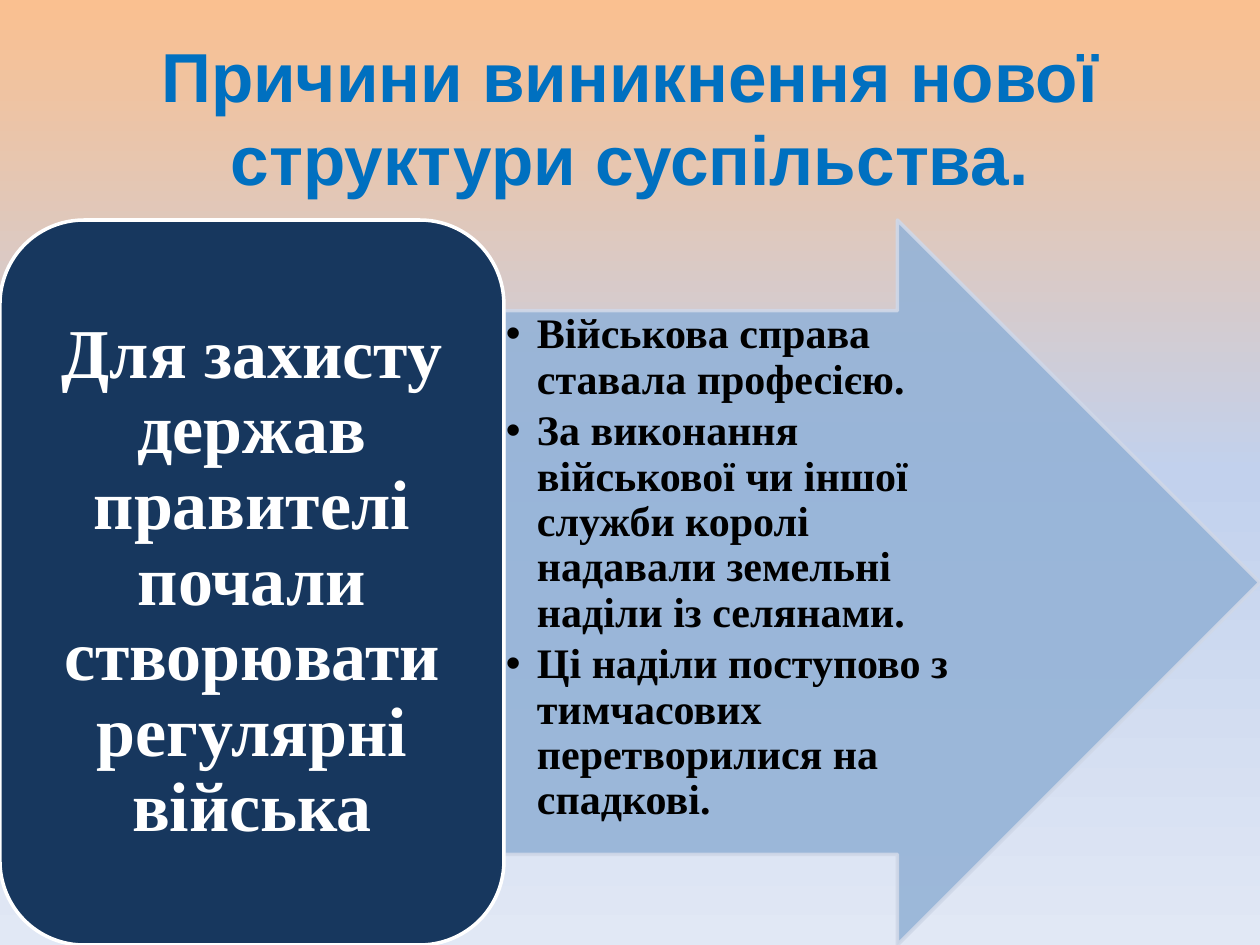
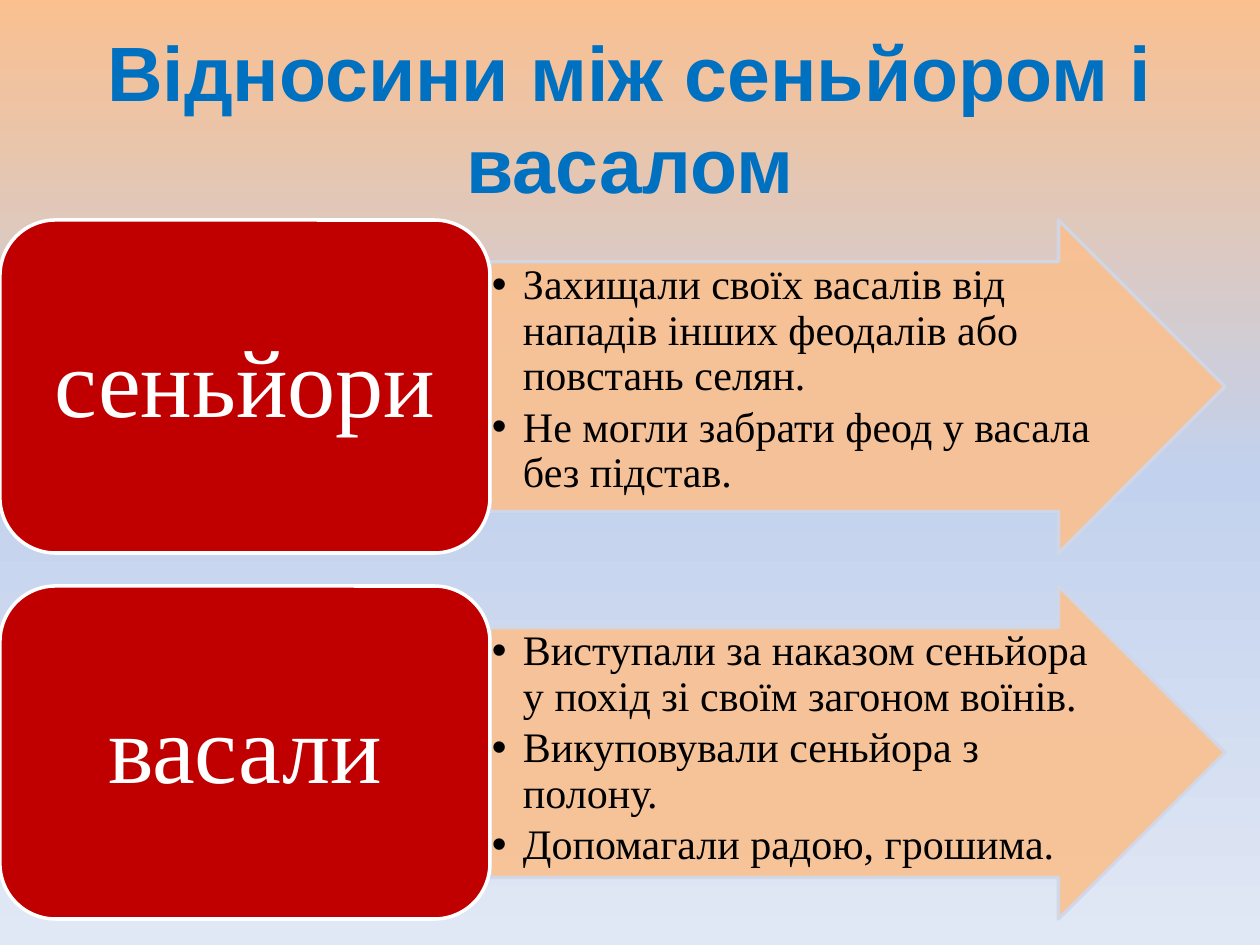
import copy

import pptx
import pptx.dml.color
import pptx.enum.shapes
import pptx.enum.text
import pptx.oxml.ns
import pptx.util
from lxml import etree

EMU_PER_PX = 914400 / 126
SLIDE_W, SLIDE_H = 1260, 945
ROW_TOP = 220
LIST_INDENT = 31
SHAFT, HEAD = 0.75, 0.5

TITLE_FONT, BODY_FONT = "Arial", "Times New Roman"
TITLE_BLUE, WHITE, BLACK = "0070C0", "FFFFFF", "000000"
ARROW_EDGE = "D0D8E8"
BACKGROUND = [(0, "FAC090"), (0.5, "C2D1ED"), (1, "E1E8F5")]

MSO_SHAPE = pptx.enum.shapes.MSO_SHAPE
PP_ALIGN = pptx.enum.text.PP_ALIGN
MSO_ANCHOR = pptx.enum.text.MSO_ANCHOR
MSO_AUTO_SIZE = pptx.enum.text.MSO_AUTO_SIZE
qn = pptx.oxml.ns.qn


def px(n):
    return pptx.util.Emu(round(n * EMU_PER_PX))


def rgb(value):
    return pptx.dml.color.RGBColor.from_string(value)


def place(sp, x, y, w, h):
    sp.left, sp.top, sp.width, sp.height = px(x), px(y), px(w), px(h)


def set_insets(tf, across, down):
    tf.margin_left = tf.margin_right = px(across)
    tf.margin_top = tf.margin_bottom = px(down)


def style_font(p, name, size, color, bold):
    p.font.name = name
    p.font.size = pptx.util.Pt(size)
    p.font.bold = bold
    p.font.color.rgb = rgb(color)


def set_background(master):
    fill = master.background.fill
    fill.gradient()
    fill.gradient_angle = 270
    first = next(master.element.cSld.iter(qn("a:gs")))
    first.addnext(copy.deepcopy(first))
    for stop, (position, color) in zip(fill.gradient_stops, BACKGROUND):
        stop.position = position
        stop.color.rgb = rgb(color)


def add_slide(prs, layout, title, size):
    s = prs.slides.add_slide(prs.slide_layouts[layout])
    sp = s.shapes.title
    place(sp, 63, 38, 1134, 157)
    tf = sp.text_frame
    tf.text = title
    tf.auto_size = MSO_AUTO_SIZE.NONE
    tf.vertical_anchor = MSO_ANCHOR.MIDDLE
    p = tf.paragraphs[0]
    p.alignment = PP_ALIGN.CENTER
    style_font(p, TITLE_FONT, size, TITLE_BLUE, True)
    return s


def add_block(s, kind, x, y, w, h, fill, line):
    sp = s.shapes.add_shape(kind, px(x), px(y), px(w), px(h))
    sp.shadow.inherit = False
    sp.fill.solid()
    sp.fill.fore_color.rgb = rgb(fill)
    sp.line.color.rgb = rgb(line)
    sp.line.width = pptx.util.Pt(2)
    return sp


def add_arrow(s, x, y, w, h, fill):
    sp = add_block(s, MSO_SHAPE.RIGHT_ARROW, x, y, w, h, fill, ARROW_EDGE)
    sp.adjustments[0], sp.adjustments[1] = SHAFT, HEAD
    for color in sp.element.spPr.iter(qn("a:srgbClr")):
        etree.SubElement(color, qn("a:alpha"), val="90000")


def fill_list(sp, x, y, w, h, items, bold):
    place(sp, x, y, w, h)
    sp.element.getparent().append(sp.element)
    tf = sp.text_frame
    tf.text = "\n".join(items)
    tf.auto_size = MSO_AUTO_SIZE.NONE
    tf.vertical_anchor = MSO_ANCHOR.TOP
    set_insets(tf, 2, 2)
    for p in tf.paragraphs:
        p.line_spacing = 0.9
        p.space_before = pptx.util.Pt(0)
        p.space_after = pptx.util.Pt(3.6)
        style_font(p, BODY_FONT, 24, BLACK, bold)
        pPr = p._p.get_or_add_pPr()
        pPr.set("marL", str(px(LIST_INDENT)))
        pPr.set("indent", str(-px(LIST_INDENT)))


def add_label(s, y, w, h, text, size, fill, bold):
    sp = add_block(s, MSO_SHAPE.ROUNDED_RECTANGLE, 0, y, w, h, fill, WHITE)
    tf = sp.text_frame
    tf.text = text
    tf.word_wrap = True
    tf.vertical_anchor = MSO_ANCHOR.MIDDLE
    pad = round(size * 0.53)
    set_insets(tf, pad, pad // 2)
    p = tf.paragraphs[0]
    p.alignment = PP_ALIGN.CENTER
    p.line_spacing = 0.9
    style_font(p, BODY_FONT, size, WHITE, bold)


def add_row(s, body, y, h, label_w, arrow_w, label, size, items, colors, bold=False):
    label_fill, arrow_fill = colors
    add_arrow(s, label_w, y, arrow_w, h, arrow_fill)
    list_w = arrow_w - h * HEAD * SHAFT
    fill_list(body, label_w, y + h * (1 - SHAFT) / 2, list_w, h * SHAFT, items, bold)
    add_label(s, y, label_w, h, label, size, label_fill, bold)


def add_causes_slide(prs):
    s = add_slide(prs, 1, "Причини виникнення нової структури суспільства.", 39.6)
    items = [
        "Військова справа ставала професією.",
        "За виконання військової чи іншої служби королі надавали земельні наділи із селянами.",
        "Ці наділи поступово з тимчасових перетворилися на спадкові.",
    ]
    label = "Для захисту держав правителі почали створювати регулярні війська"
    add_row(s, s.placeholders[1], ROW_TOP, SLIDE_H - ROW_TOP, 504, 756,
            label, 40, items, ("17375E", "95B3D7"), bold=True)


def add_relations_slide(prs):
    s = add_slide(prs, 3, "Відносини між сеньйором і васалом", 44)
    rows = [
        ("сеньйори", [
            "Захищали своїх васалів від нападів інших феодалів або повстань селян.",
            "Не могли забрати феод у васала без підстав.",
        ]),
        ("васали", [
            "Виступали за наказом сеньйора у похід зі своїм загоном воїнів.",
            "Викуповували сеньйора з полону.",
            "Допомагали радою, грошима.",
        ]),
    ]
    bodies = [s.placeholders[1], s.placeholders[2]]
    for i, (body, (label, items)) in enumerate(zip(bodies, rows)):
        add_row(s, body, ROW_TOP + i * 366, 333, 490, 735,
                label, 55, items, ("C00000", "FAC090"))


def main():
    prs = pptx.Presentation()
    prs.slide_width, prs.slide_height = px(SLIDE_W), px(SLIDE_H)
    set_background(prs.slide_master)
    add_causes_slide(prs)
    add_relations_slide(prs)
    prs.save("out.pptx")


if __name__ == "__main__":
    main()
